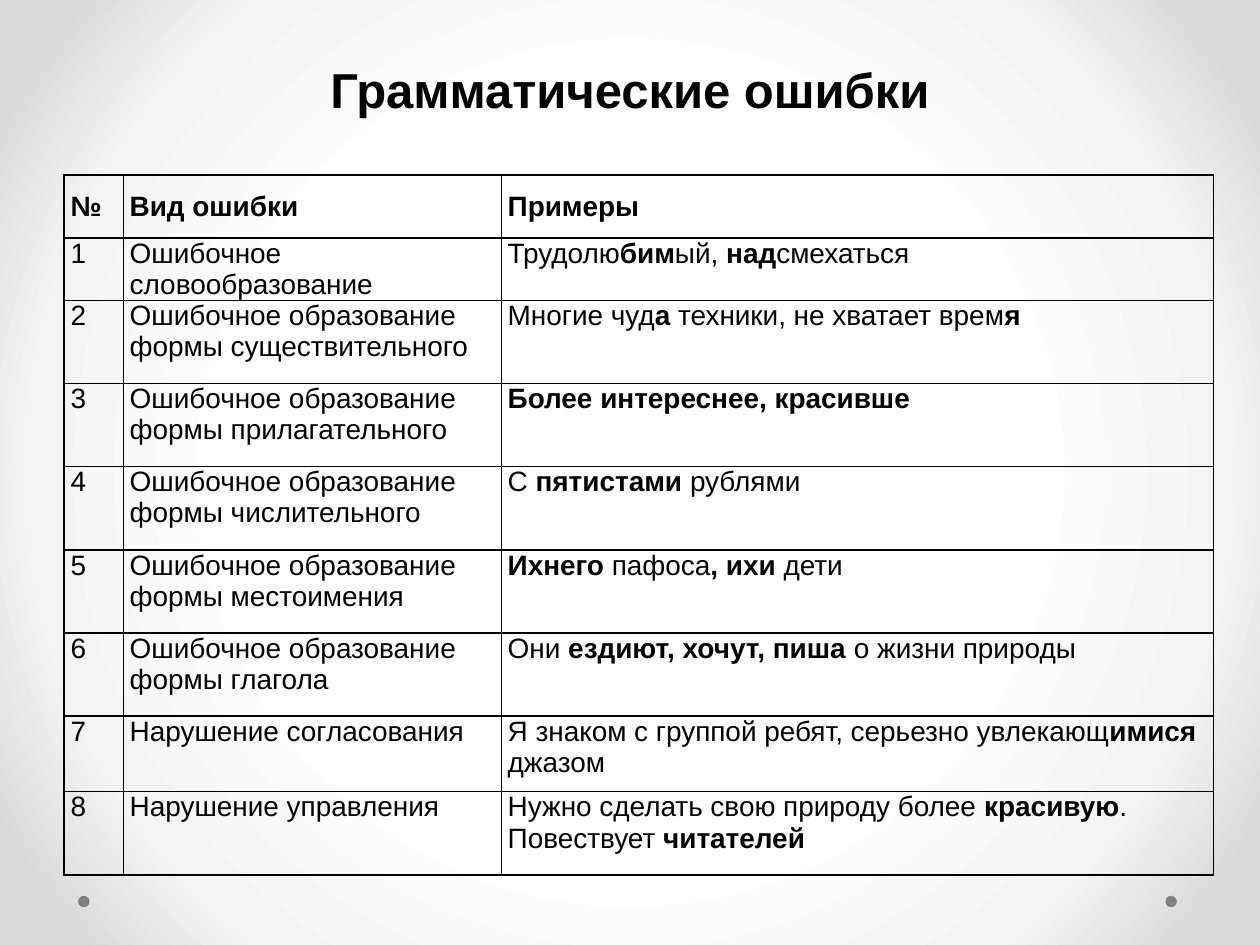
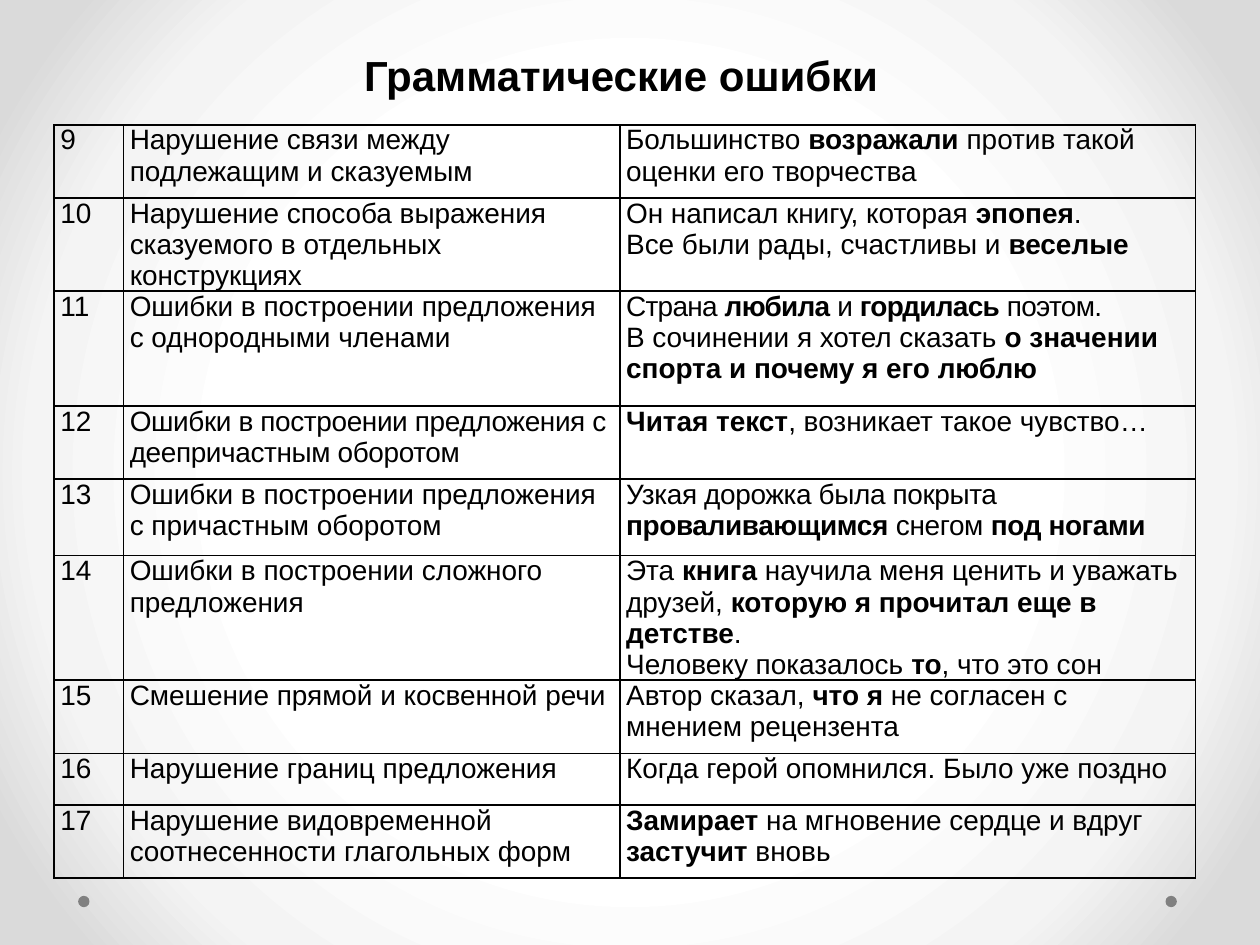
from collections import namedtuple

from pptx import Presentation
from pptx.dml.color import RGBColor
from pptx.enum.shapes import MSO_SHAPE as SHAPE
from pptx.enum.text import MSO_ANCHOR as ANCHOR, MSO_AUTO_SIZE as AUTO, PP_ALIGN as ALIGN
from pptx.oxml import parse_xml
from pptx.oxml.ns import nsdecls, qn
from pptx.util import Inches, Pt

COLORS = {
    "text": "000000",
    "border": "000000",
    "dot": "808080",
    "center": "FFFFFF",
    "middle": "F4F4F4",
    "edge": "DADADA",
}
FONT = "Arial"
TITLE = "Грамматические ошибки"
HEADER = ("№", "Вид ошибки", "Примеры")

Tight = namedtuple("Tight", "text spacing")

FORM_ERRORS = [
    ("Ошибочное словообразование", "Трудолю*бим*ый, *над*смехаться"),
    ("Ошибочное образование формы существительного",
     "Многие чуд*а* техники, не хватает врем*я*"),
    ("Ошибочное образование формы прилагательного", "*Более интереснее, красивше*"),
    ("Ошибочное образование формы числительного", "С *пятистами *рублями"),
    ("Ошибочное образование формы местоимения", "*Ихнего *пафоса*, ихи* дети"),
    ("Ошибочное образование формы глагола",
     "Они *ездиют, хочут, пиша *о жизни природы"),
    ("Нарушение согласования",
     "Я знаком с группой ребят, серьезно увлекающ*имися* джазом"),
    ("Нарушение управления",
     "Нужно сделать свою природу более *красивую*.", "Повествует *читателей*"),
]
SENTENCE_ERRORS = [
    ("Нарушение связи между подлежащим и сказуемым",
     "Большинство *возражали *против такой оценки его творчества"),
    ("Нарушение способа выражения сказуемого в отдельных конструкциях",
     "Он написал книгу, которая *эпопея*.", "Все были рады, счастливы и *веселые*"),
    ("Ошибки в построении предложения с однородными членами",
     Tight("Страна *любила* и *гордилась* поэтом.", -0.4),
     "В сочинении я хотел сказать *о значении спорта и почему я его люблю*"),
    (Tight("Ошибки в построении предложения с деепричастным оборотом", -0.2),
     "*Читая текст*, возникает такое чувство…"),
    ("Ошибки в построении предложения с причастным оборотом",
     Tight("Узкая дорожка была покрыта *проваливающимся* снегом *под ногами*", -0.2)),
    ("Ошибки в построении сложного предложения",
     "Эта *книга* научила меня ценить и уважать друзей, "
     "*которую я прочитал еще в детстве*.",
     "Человеку показалось *то*, что это сон"),
    ("Смешение прямой и косвенной речи",
     "Автор сказал, *что я* не согласен с мнением рецензента"),
    ("Нарушение границ предложения", "Когда герой опомнился. Было уже поздно"),
    ("Нарушение видовременной соотнесенности глагольных форм",
     "*Замирает *на мгновение сердце и вдруг *застучит* вновь"),
]


def color(name):
    return RGBColor.from_string(COLORS[name])


def write(p, text, size=16, bold=False, align=None, spacing=0, leading=None):
    p.alignment = align
    if leading:
        p.line_spacing = Pt(leading)
    for i, part in enumerate(text.split("*")):
        if not part:
            continue
        r = p.add_run()
        r.text = part
        r.font.name = FONT
        r.font.size = Pt(size)
        r.font.bold = bold or i % 2 == 1
        r.font.color.rgb = color("text")
        if spacing:
            r.font._element.set("spc", str(round(spacing * 100)))


def set_background(master):
    stops = "".join(
        f'<a:gs pos="{pos * 1000}"><a:srgbClr val="{COLORS[name]}"/></a:gs>'
        for pos, name in ((50, "center"), (76, "middle"), (92, "edge")))
    master.background.fill.solid()
    bg = master.element.find(".//" + qn("p:bgPr"))
    bg.replace(bg[0], parse_xml(
        f'<a:gradFill {nsdecls("a")} rotWithShape="1"><a:gsLst>{stops}</a:gsLst>'
        '<a:path path="circle"><a:fillToRect l="50000" t="50000" r="50000" b="50000"/>'
        '</a:path></a:gradFill>'))


def add_master_dots(master, slide):
    for i, left in enumerate((9.25, 0.62)):
        sp = slide.shapes.add_shape(
            SHAPE.OVAL, Inches(left), Inches(7.11), Inches(0.09), Inches(0.09))
        sp.shadow.inherit = False
        sp.fill.solid()
        sp.fill.fore_color.rgb = color("dot")
        sp.line.fill.background()
        sp.element.nvSpPr.cNvPr.set("id", str(20 + i))
        master.shapes.element.append(sp.element)


def set_title(slide, left, top, height, size):
    sp = slide.shapes.title
    sp.left, sp.top = Inches(left), Inches(top)
    sp.width, sp.height = Inches(9), Inches(height)
    tf = sp.text_frame
    tf.auto_size = AUTO.NONE
    tf.vertical_anchor = ANCHOR.BOTTOM
    write(tf.paragraphs[0], TITLE, size=size, bold=True, align=ALIGN.CENTER, leading=58)


def set_borders(cell):
    tc_pr = cell._tc.get_or_add_tcPr()
    for i, side in enumerate("LRTB"):
        tc_pr.insert(i, parse_xml(
            f'<a:ln{side} {nsdecls("a")} w="12700"><a:solidFill>'
            f'<a:srgbClr val="{COLORS["border"]}"/></a:solidFill></a:ln{side}>'))


def fill_cell(cell, paragraphs, anchor=ANCHOR.TOP, **fmt):
    cell.margin_left = cell.margin_right = Inches(0.05)
    cell.margin_top = cell.margin_bottom = 0
    cell.vertical_anchor = anchor
    cell.fill.background()
    set_borders(cell)
    tf = cell.text_frame
    for i, item in enumerate(paragraphs):
        p = tf.add_paragraph() if i else tf.paragraphs[0]
        text, spacing = item if isinstance(item, Tight) else (item, 0)
        write(p, text, spacing=spacing, **fmt)


def add_error_table(slide, left, top, widths, heights, errors, first, header=None):
    table = slide.shapes.add_table(
        len(heights), len(widths), Inches(left), Inches(top),
        Inches(sum(widths)), Inches(sum(heights))).table
    table.first_row = table.horz_banding = False
    for col, width in zip(table.columns, widths):
        col.width = Inches(width)
    for row, height in zip(table.rows, heights):
        row.height = Inches(height)
    rows = list(table.rows)
    if header:
        for i, (cell, text) in enumerate(zip(rows.pop(0).cells, header)):
            fill_cell(cell, [text], anchor=ANCHOR.MIDDLE, bold=True,
                      align=ALIGN.JUSTIFY if i else None)
    for number, (row, (kind, *examples)) in enumerate(zip(rows, errors), first):
        for cell, paragraphs in zip(row.cells, ([str(number)], [kind], examples)):
            fill_cell(cell, paragraphs)


def main():
    prs = Presentation()
    prs.slide_width, prs.slide_height = Inches(10), Inches(7.5)
    master, layout = prs.slide_master, prs.slide_layouts[5]
    set_background(master)

    s = prs.slides.add_slide(layout)
    add_master_dots(master, s)
    set_title(s, 0.5, 0.3, 0.69, 28)
    add_error_table(s, 0.51, 1.39, (0.47, 3, 5.65),
                    (0.5, 0.33, *[0.66] * 5, 0.6, 0.66),
                    FORM_ERRORS, first=1, header=HEADER)

    s = prs.slides.add_slide(layout)
    set_title(s, 0.43, 0.29, 0.55, 24)
    add_error_table(s, 0.43, 0.99, (0.55, 3.94, 4.57),
                    (0.58, 0.58, 0.91, 0.58, 0.61, 0.85, 0.58, 0.41, 0.58),
                    SENTENCE_ERRORS, first=len(FORM_ERRORS) + 1)

    prs.save("out.pptx")


if __name__ == "__main__":
    main()
